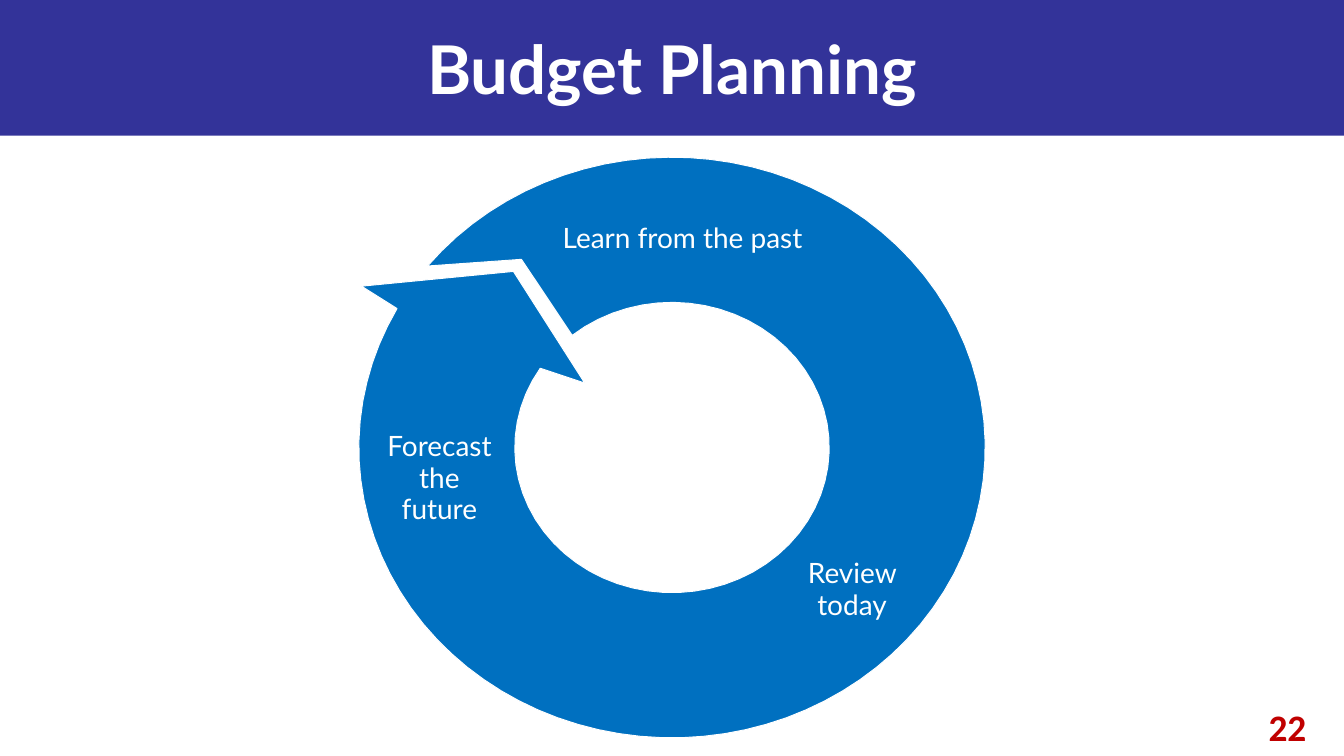
"""Build the Budget Planning slide with its circular arrow."""
from dataclasses import dataclass
from math import cos, radians, sin

from pptx import Presentation
from pptx.dml.color import RGBColor
from pptx.enum.shapes import MSO_SHAPE
from pptx.enum.text import MSO_ANCHOR, MSO_AUTO_SIZE, PP_ALIGN
from pptx.util import Inches, Pt

RECTANGLE = MSO_SHAPE.RECTANGLE
MIDDLE = MSO_ANCHOR.MIDDLE
TOP = MSO_ANCHOR.TOP
CENTER = PP_ALIGN.CENTER
NO_AUTOFIT = MSO_AUTO_SIZE.NONE

COLORS = {"band": "333399", "ring": "0070C0", "white": "FFFFFF", "number": "C00000"}
PAGE_WIDTH = 10
PAGE_HEIGHT = PAGE_WIDTH * 9 / 16
RING_CENTER = (5, 3.33)
OUTER_RADII = (2.33, 2.16)
INNER_RADII = (1.17, 1.08)
TAIL_NOTCH = [(3.88, 1.93)]
ARROWHEAD = [(4.35, 2.85), (3.82, 2.02), (2.69, 2.13)]


@dataclass
class Label:
    """A caption and its rectangle in inches."""

    text: str
    left: float
    top: float
    width: float
    height: float
    wrap: bool = True


LABELS = [
    Label("Forecast the future", 2.82, 3.2, 0.9, 0.72),
    Label("Learn from the past", 4.15, 1.66, 1.86, 0.24, wrap=False),
    Label("Review today", 5.84, 4.15, 1, 0.48),
]


def color(name: str) -> RGBColor:
    """Return a named palette colour."""
    return RGBColor.from_string(COLORS[name])


def arc(radii: tuple, start: float, end: float, steps: int) -> list:
    """Return points along an elliptical arc around the ring centre."""
    angles = [radians(start + (end - start) * step / steps) for step in range(steps + 1)]
    return [
        (RING_CENTER[0] + radii[0] * cos(angle), RING_CENTER[1] + radii[1] * sin(angle))
        for angle in angles
    ]


def format_text(shape, text: str, size: float, font: str, fill: str, bold: bool = False,
                anchor=MIDDLE, wrap: bool = True) -> None:
    """Write one centred paragraph into a shape."""
    frame = shape.text_frame
    frame.text = text
    frame.word_wrap = wrap
    frame.auto_size = NO_AUTOFIT
    frame.vertical_anchor = anchor
    para = frame.paragraphs[0]
    para.alignment = CENTER
    para.font.size = Pt(size)
    para.font.name = font
    para.font.bold = bold
    para.font.color.rgb = color(fill)


def add_rectangle(page, left: float, top: float, width: float, height: float, fill: str):
    """Add a flat filled rectangle."""
    box = page.shapes.add_shape(
        RECTANGLE, Inches(left), Inches(top), Inches(width), Inches(height))
    box.shadow.inherit = False
    box.fill.solid()
    box.fill.fore_color.rgb = color(fill)
    box.line.fill.background()
    return box


def add_title(page, text: str) -> None:
    """Add the band and place the title above it."""
    band = add_rectangle(page, -0.01, 0, 10.01, 1.01, "band")
    title = page.shapes.title
    title.left, title.top = Inches(0), Inches(0)
    title.width, title.height = Inches(PAGE_WIDTH), Inches(1.01)
    format_text(title, text, 36, "Lato", "white", bold=True)
    band.element.addnext(title.element)


def add_circular_arrow(page) -> None:
    """Draw the ring whose head meets its own tail."""
    outline = (
        arc(OUTER_RADII, 208.6, -141.3, 90)
        + TAIL_NOTCH
        + arc(INNER_RADII, 230.6, 573.1, 60)
        + ARROWHEAD
    )
    points = [(Inches(x), Inches(y)) for x, y in outline]
    builder = page.shapes.build_freeform(*points[0])
    builder.add_line_segments(points[1:], close=True)
    ring = builder.convert_to_shape()
    ring.shadow.inherit = False
    ring.fill.solid()
    ring.fill.fore_color.rgb = color("ring")
    ring.line.color.rgb = color("white")
    ring.line.width = Pt(0.5)


def add_label(page, label: Label) -> None:
    """Add a caption on the ring."""
    box = add_rectangle(page, label.left, label.top, label.width, label.height, "ring")
    format_text(box, label.text, 15, "Lato", "white", wrap=label.wrap)
    frame = box.text_frame
    frame.margin_left = frame.margin_right = frame.margin_top = frame.margin_bottom = 0
    frame.paragraphs[0].line_spacing = 0.95


def main() -> None:
    """Build and save the deck."""
    deck = Presentation()
    deck.slide_width, deck.slide_height = Inches(PAGE_WIDTH), Inches(PAGE_HEIGHT)
    page = deck.slides.add_slide(deck.slide_layouts[5])
    number = page.shapes.add_textbox(Inches(9.16), Inches(5.19), Inches(0.84), Inches(0.44))
    format_text(number, "22", 20, "Calibri", "number", bold=True, anchor=TOP)
    add_title(page, "Budget Planning")
    add_circular_arrow(page)
    for label in LABELS:
        add_label(page, label)
    deck.save("out.pptx")


if __name__ == "__main__":
    main()
